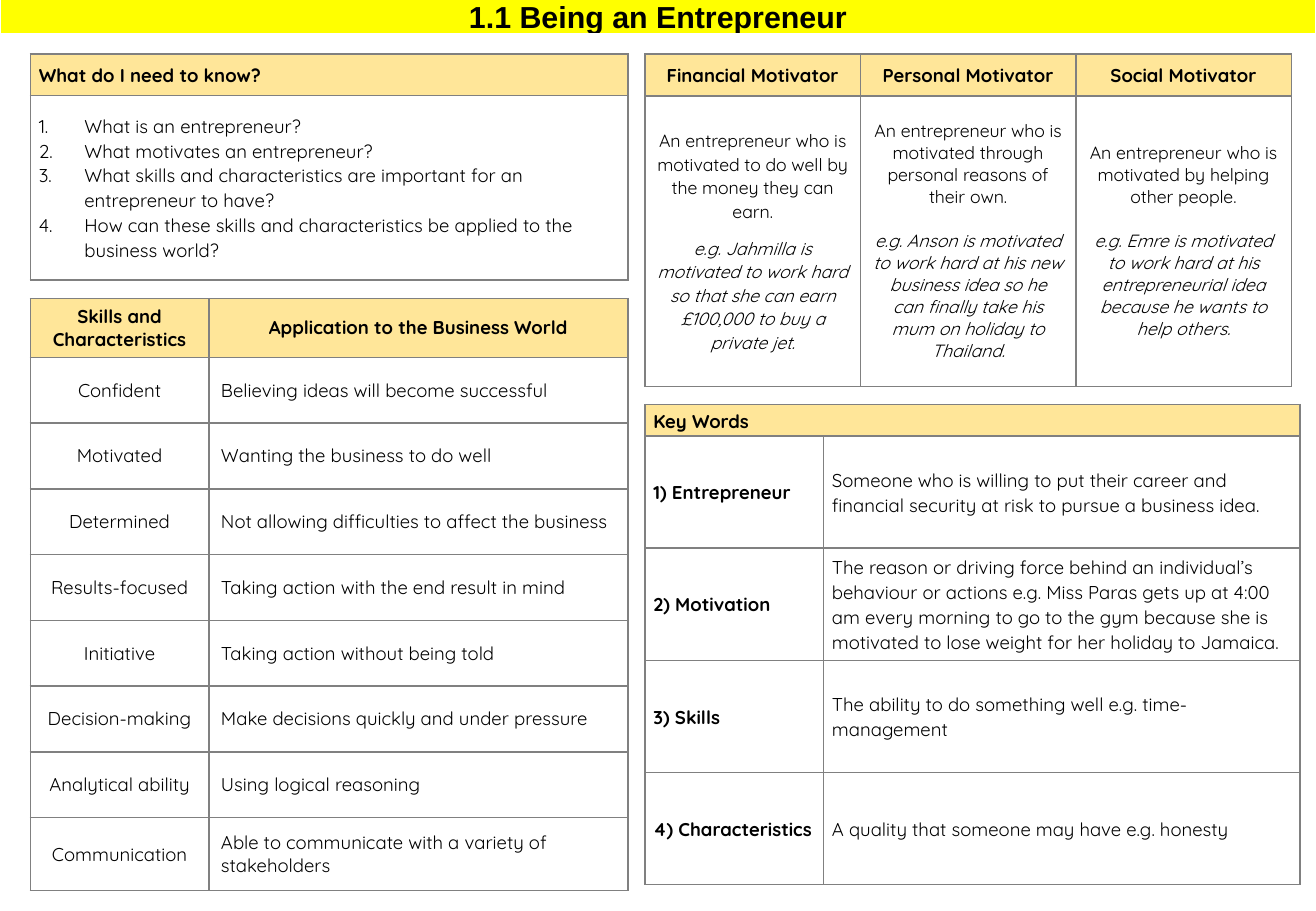
"""Build a one-page study sheet on being an entrepreneur."""
from lxml import etree
from pptx import Presentation
from pptx.dml.color import RGBColor
from pptx.enum.text import MSO_ANCHOR, PP_ALIGN
from pptx.oxml.ns import qn
from pptx.util import Pt

LEFT, MID = PP_ALIGN.LEFT, PP_ALIGN.CENTER
TOP, CENTRE = MSO_ANCHOR.TOP, MSO_ANCHOR.MIDDLE
BLACK = RGBColor(0x00, 0x00, 0x00)
WHITE = RGBColor(0xFF, 0xFF, 0xFF)
GREY = RGBColor(0x80, 0x80, 0x80)
YELLOW = RGBColor(0xFF, 0xFF, 0x00)
GOLD = RGBColor(0xFF, 0xE6, 0x99)
FONT = "Quicksand"
TIGHT = 1.07

deck = Presentation()
deck.slide_width, deck.slide_height = Pt(780), Pt(540)
slide = deck.slides.add_slide(deck.slide_layouts[6])


def edge(cell, side, color, width):
    line = etree.SubElement(cell._tc.get_or_add_tcPr(), qn("a:ln" + side), w=str(Pt(width)))
    fill = etree.SubElement(line, qn("a:solidFill"))
    etree.SubElement(fill, qn("a:srgbClr"), val=str(color))


def grid(left, top, widths, heights, rows, head=GOLD, line=GREY, base=1,
         font=FONT, size=11, inset=(7.2, 3.6), spacing=None, anchor=CENTRE):
    frame = slide.shapes.add_table(len(rows), len(widths), Pt(left), Pt(top),
                                   Pt(sum(widths)), Pt(sum(heights)))
    table = frame.table
    table.first_row = table.horz_banding = False
    for col, width in zip(table.columns, widths):
        col.width = Pt(width)
    for r, (height, texts) in enumerate(zip(heights, rows)):
        table.rows[r].height = Pt(height)
        for c, text in enumerate(texts):
            cell = table.cell(r, c)
            for side in "LRTB":
                edge(cell, side, line, base if side == "B" else 1)
            if r == 0:
                cell.fill.solid()
                cell.fill.fore_color.rgb = head
            else:
                cell.fill.background()
            cell.margin_left = cell.margin_right = Pt(inset[0])
            cell.margin_top = cell.margin_bottom = Pt(inset[1])
            cell.vertical_anchor = anchor
            cell.text_frame.text = text
            for para in cell.text_frame.paragraphs:
                para.alignment = LEFT
                if spacing:
                    para.line_spacing = spacing
                for run in para.runs:
                    run.font.name = font
                    run.font.size = Pt(size)
                    run.font.bold = r == 0
                    run.font.color.rgb = BLACK
    return table


title = grid(0, -0.7, [780], [18], [["1.1 Being an Entrepreneur"]], YELLOW, WHITE, 3,
             "Arial", 18, (5, 0), TIGHT, TOP)
title.cell(0, 0).text_frame.paragraphs[0].alignment = MID

goals = [
    "What is an entrepreneur?",
    "What motivates an entrepreneur?",
    "What skills and characteristics are important for an entrepreneur to have?",
    "How can these skills and characteristics be applied to the business world?",
]
know = grid(18, 32, [354.2], [24.5, 109.4],
            [["What do I need to know?"], ["\n".join(goals)]], inset=(5, 0), spacing=TIGHT)
for para in know.cell(1, 0).text_frame.paragraphs:
    props = para._p.get_or_add_pPr()
    props.set("marL", str(Pt(27)))
    props.set("indent", str(Pt(-27)))
    etree.SubElement(props, qn("a:buFont"), typeface="+mj-lt")
    etree.SubElement(props, qn("a:buAutoNum"), type="arabicPeriod")

words = grid(382.3, 239.8, [105.8, 282.4], [18.6] + [66.5] * 4, [
    ["Key Words", ""],
    ["1) Entrepreneur", "Someone who is willing to put their career and financial security "
     "at risk to pursue a business idea."],
    ["2) Motivation", "The reason or driving force behind an individual’s behaviour or actions "
     "e.g. Miss Paras gets up at 4:00 am every morning to go to the gym because she is "
     "motivated to lose weight for her holiday to Jamaica."],
    ["3) Skills", "The ability to do something well e.g. time-management"],
    ["4) Characteristics", "A quality that someone may have e.g. honesty"],
], inset=(5, 0), spacing=TIGHT)
words.cell(0, 0).merge(words.cell(0, 1))
for r in range(1, 5):
    words.cell(r, 0).text_frame.paragraphs[0].runs[0].font.bold = True

skills = grid(18, 177, [105.8, 248.4], [34.8] + [39] * 7 + [43.2], [
    ["Skills and Characteristics", "Application to the Business World"],
    ["Confident", "Believing ideas will become successful"],
    ["Motivated", "Wanting the business to do well"],
    ["Determined", "Not allowing difficulties to affect the business"],
    ["Results-focused", "Taking action with the end result in mind"],
    ["Initiative", "Taking action without being told"],
    ["Decision-making", "Make decisions quickly and under pressure"],
    ["Analytical ability", "Using logical reasoning"],
    ["Communication", "Able to communicate with a variety of stakeholders"],
])
for r in range(9):
    skills.cell(r, 0).text_frame.paragraphs[0].alignment = MID
skills.cell(0, 1).text_frame.paragraphs[0].alignment = MID

drives = grid(382.3, 32, [127.7] * 3, [25, 172], [
    ["Financial Motivator", "Personal Motivator", "Social Motivator"],
    ["An entrepreneur who is motivated to do well by the money they can earn.\n"
     "e.g. Jahmilla is motivated to work hard so that she can earn £100,000 to buy a private jet.",
     "An entrepreneur who is motivated through personal reasons of their own.\n"
     "e.g. Anson is motivated to work hard at his new business idea so he can finally take "
     "his mum on holiday to Thailand.",
     "An entrepreneur who is motivated by helping other people.\n"
     "e.g. Emre is motivated to work hard at his entrepreneurial idea because he wants to "
     "help others."],
])
for c in range(3):
    drives.cell(0, c).text_frame.paragraphs[0].alignment = MID
    rule, case = drives.cell(1, c).text_frame.paragraphs
    for para in (rule, case):
        para.alignment = MID
        para.runs[0].font.size = Pt(10.5)
        if c == 0:
            para.line_spacing = TIGHT
            para.space_after = Pt(8)
    if c:
        rule.space_after = Pt(13)
    case.runs[0].font.italic = True

deck.save("out.pptx")
